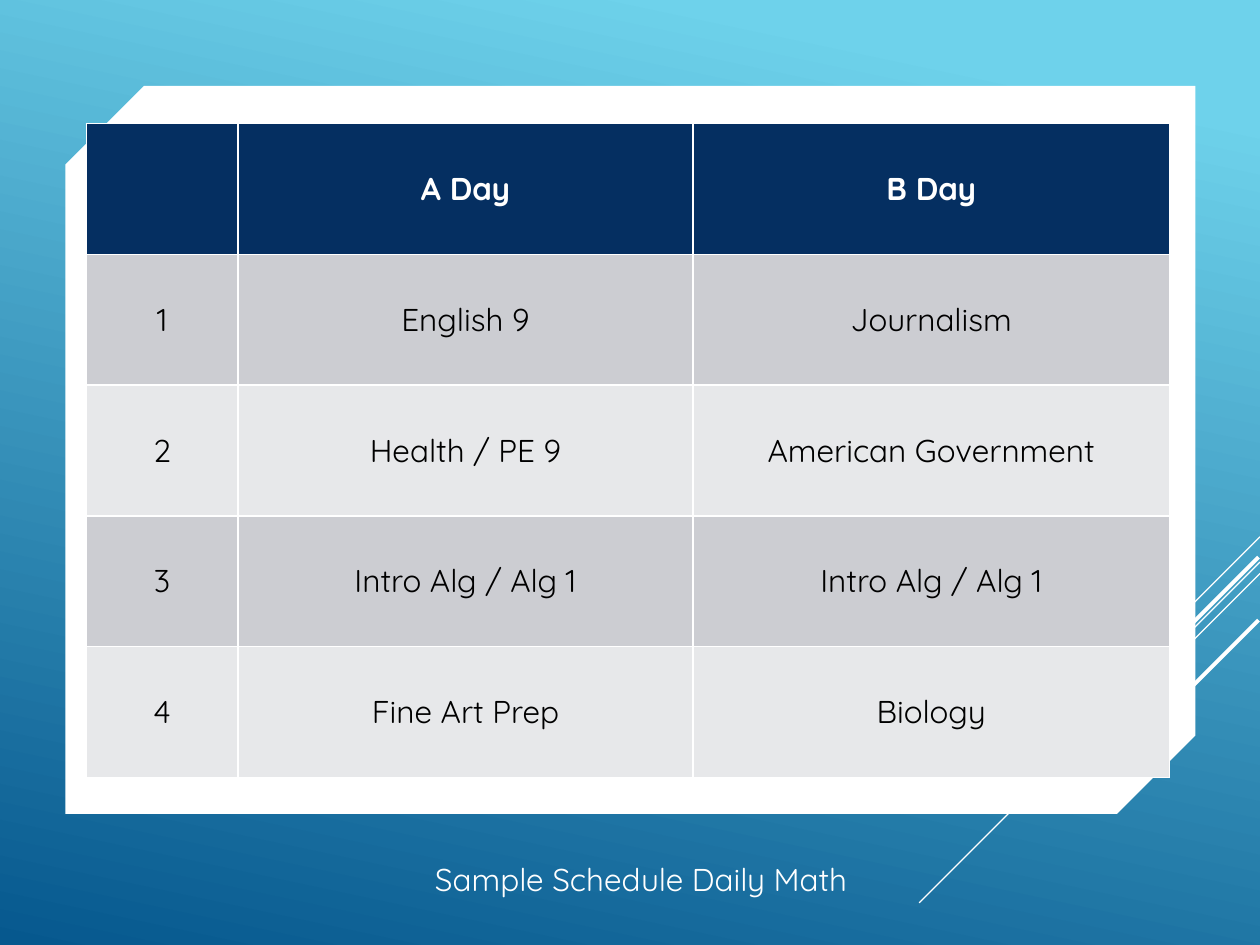
from pptx import Presentation
from pptx.dml.color import RGBColor as Rgb
from pptx.enum.shapes import MSO_CONNECTOR as Link, MSO_SHAPE as Form
from pptx.enum.text import MSO_ANCHOR as Anchor, PP_ALIGN as Align
from pptx.oxml.ns import qn
from pptx.util import Cm, Pt
from lxml.etree import SubElement

HUES = {
    "sky": "6ED2EB", "deep": "06588E", "white": "FFFFFF", "black": "000000",
    "navy": "052F61", "band": "CCCDD2", "pale": "E7E8EA",
}
ROWS = [
    ("", "A Day", "B Day"),
    ("1", "English 9", "Journalism"),
    ("2", "Health / PE 9", "American Government"),
    ("3", "Intro Alg / Alg 1", "Intro Alg / Alg 1"),
    ("4", "Fine Art Prep", "Biology"),
]
# right end (x, y), run to the lower left, width in points
RAYS = [
    (25.4, 10.82, 2.11, 0.75),
    (25.4, 11.33, 6.87, 0.75),
    (25.4, 11.56, 4.37, 0.75),
    (25.37, 11.23, 3.99, 2.25),
    (25.37, 12.5, 2.9, 2.25),
]


def hue(name):
    return Rgb.from_string(HUES[name])


def write(frame, text, color="black", size=18, bold=False):
    para = frame.paragraphs[0]
    para.alignment = Align.CENTER
    run = para.add_run()
    run.text = text
    font = run.font
    font.name, font.size, font.bold = "Quicksand", Pt(size), bold
    font.color.rgb = hue(color)


def paint_back(slide):
    fill = slide.background.fill
    fill.gradient()
    fill.gradient_angle = 258
    for stop, (place, name) in zip(fill.gradient_stops, [(0.1, "sky"), (1, "deep")]):
        stop.position = place
        stop.color.rgb = hue(name)


def draw_rays(slide):
    """Draw the parallel 45 degree lines at the right edge."""
    for x, y, run, width in RAYS:
        ray = slide.shapes.add_connector(
            Link.STRAIGHT, Cm(x), Cm(y), Cm(x - run), Cm(y + run))
        ray.line.color.rgb = hue("white")
        ray.line.width = Pt(width)
        SubElement(ray._element.spPr, qn("a:effectLst"))


def draw_card(slide, x, y, w, h):
    card = slide.shapes.add_shape(Form.SNIP_2_DIAG_RECTANGLE, Cm(x), Cm(y), Cm(w), Cm(h))
    card.adjustments[0] = 0.108
    card.adjustments[1] = 0
    card.shadow.inherit = False
    card.fill.solid()
    card.fill.fore_color.rgb = hue("white")
    card.line.fill.background()


def draw_plan(slide, x, y, w, h):
    """Fill the box with the class schedule; the table style rules it in white."""
    shares = (0.14, 0.42, 0.44)
    table = slide.shapes.add_table(
        len(ROWS), len(shares), Cm(x), Cm(y), Cm(w), Cm(h)).table
    for col, share in zip(table.columns, shares):
        col.width = Cm(w * share)
    for r, row in enumerate(ROWS):
        head = r == 0
        shade = "navy" if head else "band" if r % 2 else "pale"
        for c, text in enumerate(row):
            cell = table.cell(r, c)
            cell.fill.solid()
            cell.fill.fore_color.rgb = hue(shade)
            cell.vertical_anchor = Anchor.MIDDLE
            if text:
                write(cell.text_frame, text, color="white" if head else "black", bold=head)


def add_note(slide, text, x, y, w, h):
    frame = slide.shapes.add_textbox(Cm(x), Cm(y), Cm(w), Cm(h)).text_frame
    frame.word_wrap = True
    write(frame, text, color="white")


def main():
    deck = Presentation()
    deck.slide_width, deck.slide_height = Cm(25.4), Cm(19.05)
    slide = deck.slides.add_slide(deck.slide_layouts[6])
    paint_back(slide)
    draw_rays(slide)
    draw_card(slide, 1.32, 1.73, 22.78, 14.68)
    add_note(slide, "Sample Schedule Daily Math", 2.41, 17.22, 21.03, 1.02)
    draw_plan(slide, 1.74, 2.49, 21.84, 13.18)
    deck.save("out.pptx")


if __name__ == "__main__":
    main()
